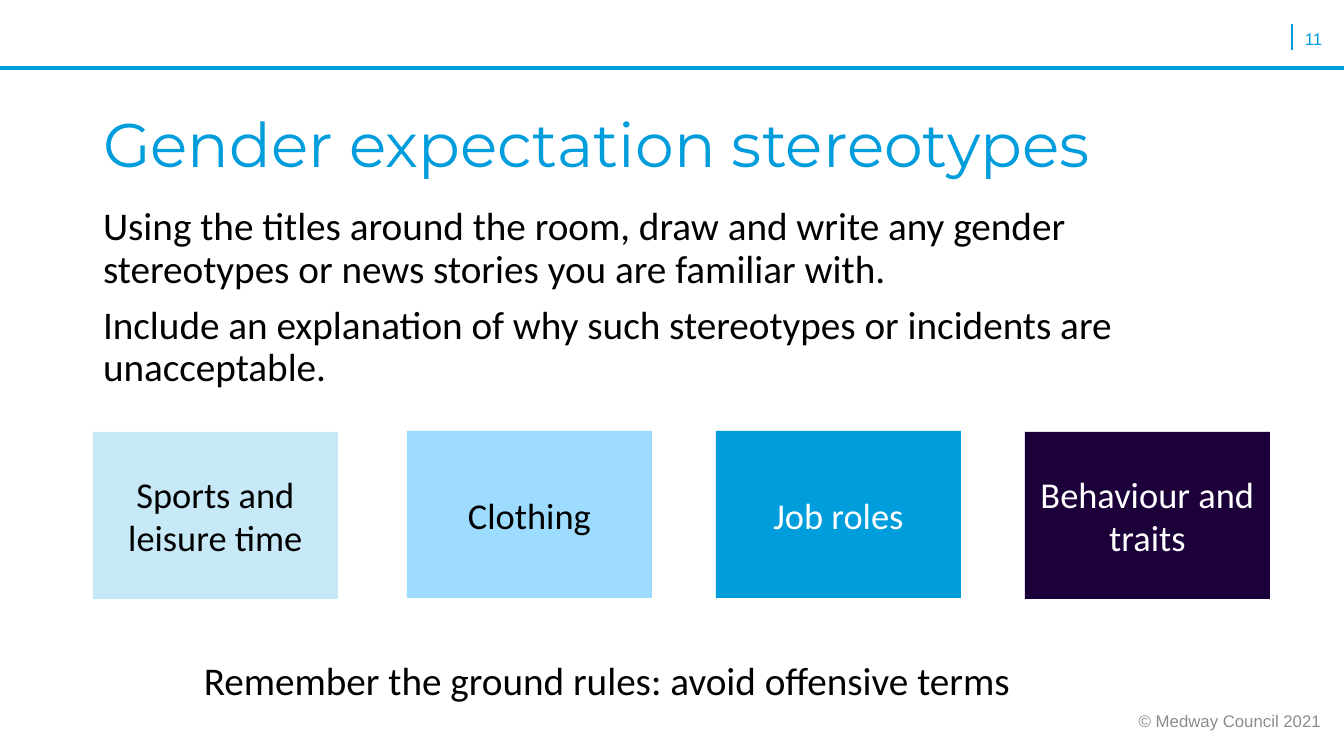
from pptx import Presentation
from pptx.dml.color import RGBColor
from pptx.enum.shapes import MSO_CONNECTOR, MSO_SHAPE
from pptx.enum.text import MSO_ANCHOR, MSO_AUTO_SIZE, PP_ALIGN
from pptx.oxml.ns import qn
from pptx.util import Pt
from lxml.etree import SubElement

# Content: lengths in px
SLIDE_SIZE = (1344, 756)
TITLE = ("Gender expectation stereotypes", (93, 109, 1159, 146))
BODY = (
    [
        "Using the titles around the room, draw and write any gender stereotypes "
        "or news stories you are familiar with.",
        "Include an explanation of why such stereotypes or incidents are unacceptable.",
    ],
    (93, 202, 1177, 163),
)
TOPIC_SIZE = (245, 167)
TOPICS = [  # label, left, top, fill, text colour
    ("Sports and leisure time", 93, 432, "pale", "black"),
    ("Clothing", 407, 431, "sky", "black"),
    ("Job roles", 716, 431, "blue", "white"),
    ("Behaviour and traits", 1025, 432, "navy", "white"),
]
NOTES = [  # text, box, text style, frame format, alignment
    ("11", (1295, 24, 42, 26), "number", {}, PP_ALIGN.LEFT),
    ("© Medway Council 2021", (1095, 701, 236, 40), "footer",
     {"vertical_anchor": MSO_ANCHOR.MIDDLE}, PP_ALIGN.RIGHT),
    ("Remember the ground rules: avoid offensive terms", (194, 651, 845, 57), "body",
     {}, PP_ALIGN.LEFT),
]
RULES = [  # from, to, width in points
    ((1292, 24), (1292, 50), 1.5),
    ((0, 68), (1344, 68), 2.25),
]

# Theme: colours and type sizes
THEME = {
    "colours": {
        "blue": "009DDC", "sky": "9DDCFF", "pale": "C7E9F7", "navy": "1C0039",
        "black": "000000", "white": "FFFFFF", "grey": "8C8C8C",
    },
    "text": {  # font, size, colour
        "title": ("Montserrat", 44, "blue"),
        "body": ("Calibri", 28, "black"),
        "topic": ("Calibri", 26, "black"),
        "number": ("Arial", 12, "blue"),
        "footer": ("Arial", 12, "grey"),
    },
}
SCALE = 914400 / 100.8


def px(*lengths):
    return [round(length * SCALE) for length in lengths]


def colour(name):
    return RGBColor.from_string(THEME["colours"][name])


def apply(target, values):
    for name, value in values.items():
        setattr(target, name, value)


def place(shape, box):
    apply(shape, dict(zip(("left", "top", "width", "height"), px(*box))))


def write(shape, lines, style, frame=None, paragraph_format=None,
          text_colour=None, space_between=0):
    name, size, default_colour = THEME["text"][style]
    text_frame = shape.text_frame
    apply(text_frame, {
        "word_wrap": True, "auto_size": MSO_AUTO_SIZE.NONE,
        "vertical_anchor": MSO_ANCHOR.TOP, **(frame or {}),
    })
    for index, line in enumerate(lines):
        paragraph = text_frame.add_paragraph() if index else text_frame.paragraphs[0]
        properties = paragraph._p.get_or_add_pPr()
        properties.set("marL", "0")
        properties.set("indent", "0")
        SubElement(properties, qn("a:buNone"))
        apply(paragraph, {
            "alignment": PP_ALIGN.LEFT,
            "space_before": Pt(space_between if index else 0),
            **(paragraph_format or {}),
        })
        run = paragraph.add_run()
        run.text = line
        apply(run.font, {"name": name, "size": Pt(size)})
        run.font.color.rgb = colour(text_colour or default_colour)


def add_rule(slide, start, end, width):
    rule = slide.shapes.add_connector(MSO_CONNECTOR.STRAIGHT, *px(*start, *end))
    rule.line.color.rgb = colour("blue")
    rule.line.width = Pt(width)
    SubElement(rule._element.spPr, qn("a:effectLst"))


def add_topic(slide, label, left, top, fill, text_colour):
    topic = slide.shapes.add_shape(MSO_SHAPE.RECTANGLE, *px(left, top, *TOPIC_SIZE))
    topic.shadow.inherit = False
    topic.fill.solid()
    topic.fill.fore_color.rgb = colour(fill)
    topic.line.fill.background()
    write(topic, [label], "topic", {"vertical_anchor": MSO_ANCHOR.MIDDLE},
          {"alignment": PP_ALIGN.CENTER}, text_colour)


def main():
    presentation = Presentation()
    apply(presentation, dict(zip(("slide_width", "slide_height"), px(*SLIDE_SIZE))))
    slide = presentation.slides.add_slide(presentation.slide_layouts[1])

    # Header rules
    for rule in RULES:
        add_rule(slide, *rule)

    # Title and body placeholders
    title, body = slide.shapes.title, slide.placeholders[1]
    place(title, TITLE[1])
    write(title, [TITLE[0]], "title", paragraph_format={"line_spacing": 0.9})
    place(body, BODY[1])
    write(body, BODY[0], "body", paragraph_format={"line_spacing": 0.9}, space_between=10)

    # Topic boxes
    for topic in TOPICS:
        add_topic(slide, *topic)

    # Slide number, copyright line and reminder
    for text, box, style, frame, alignment in NOTES:
        note = slide.shapes.add_textbox(*px(*box))
        write(note, [text], style, frame, {"alignment": alignment})

    presentation.save("out.pptx")


if __name__ == "__main__":
    main()
